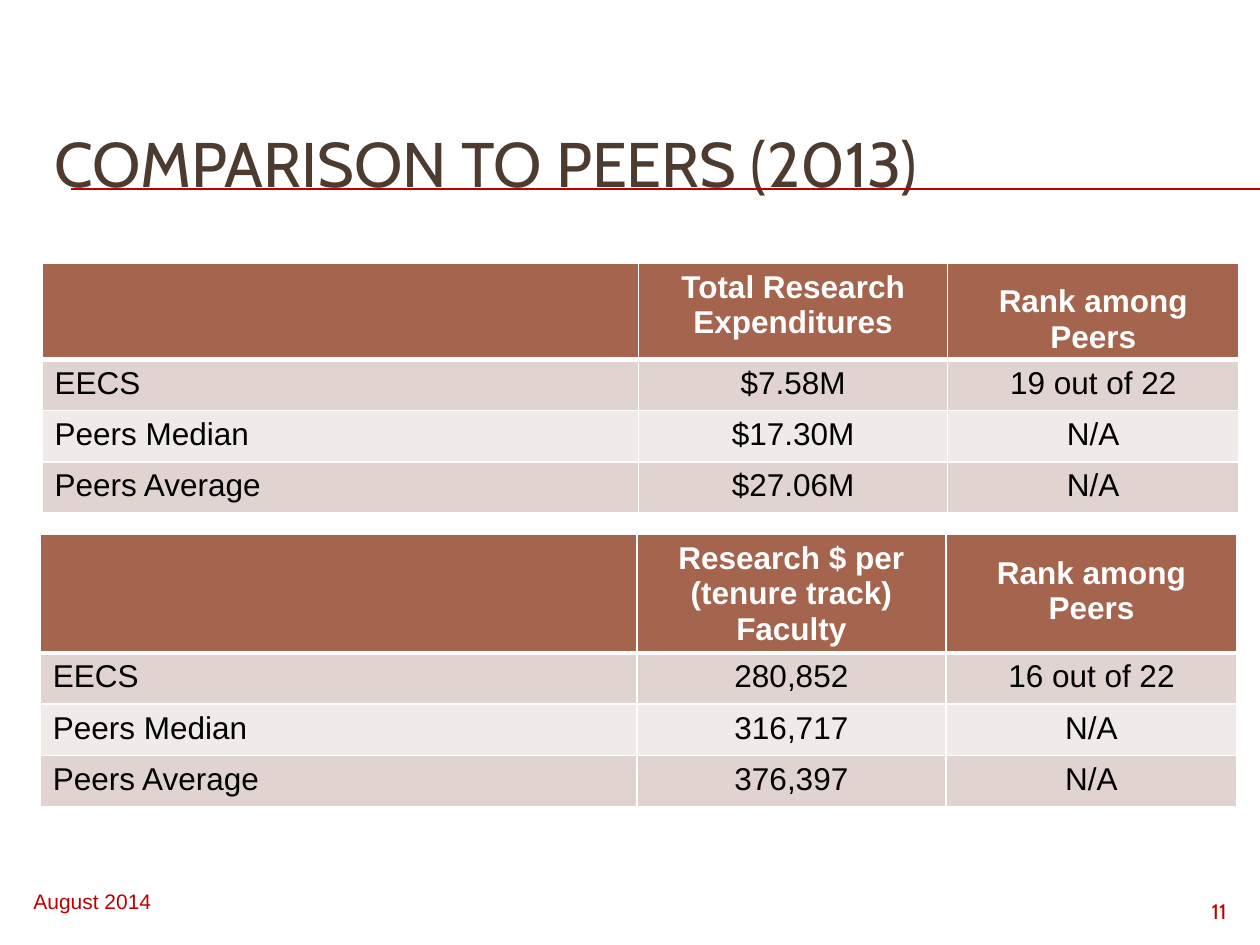
from dataclasses import dataclass

from lxml.etree import SubElement
from pptx import Presentation
from pptx.dml.color import RGBColor
from pptx.enum.shapes import MSO_CONNECTOR
from pptx.enum.text import MSO_ANCHOR, MSO_AUTO_SIZE, PP_ALIGN
from pptx.oxml.ns import qn
from pptx.util import Pt


@dataclass(frozen=True)
class Theme:
    title_color: str = "4E3B30"
    accent: str = "C00000"
    header_fill: str = "A5644E"
    odd_fill: str = "E1D3D0"
    even_fill: str = "F0EAE9"
    white: str = "FFFFFF"
    black: str = "000000"
    heading_font: str = "Cabin"
    body_font: str = "Arial"
    title_size: int = 36
    table_size: int = 18
    footer_size: int = 12


THEME = Theme()
COLUMN_WIDTHS = (341, 176.5, 166.5)
ROW_HEIGHT = 29.2


def style_para(para, font, size, color, align=PP_ALIGN.LEFT, bold=False):
    para.alignment = align
    for span in para.runs:
        span.font.name = font
        span.font.size = Pt(size)
        span.font.bold = bold
        span.font.color.rgb = RGBColor.from_string(color)


def add_rule(page):
    rule = page.shapes.add_connector(
        MSO_CONNECTOR.STRAIGHT, Pt(40.5), Pt(108), Pt(720), Pt(108))
    rule.line.color.rgb = RGBColor.from_string(THEME.accent)
    rule.line.width = Pt(0.75)
    SubElement(rule._element.spPr, qn("a:effectLst"))


def set_title(page, text):
    title = page.shapes.title
    title.left, title.top, title.width, title.height = Pt(24), Pt(60), Pt(684), Pt(66)
    frame = title.text_frame
    frame.text = text
    frame.auto_size = MSO_AUTO_SIZE.NONE
    frame.vertical_anchor = MSO_ANCHOR.MIDDLE
    style_para(frame.paragraphs[0], THEME.heading_font, THEME.title_size, THEME.title_color)


def add_footer(page, text, left, top, width, height, font, align):
    box = page.shapes.add_textbox(Pt(left), Pt(top), Pt(width), Pt(height))
    frame = box.text_frame
    frame.word_wrap = True
    frame.text = text
    style_para(frame.paragraphs[0], font, THEME.footer_size, THEME.accent, align)


def set_borders(cell, **widths):
    properties = cell._tc.get_or_add_tcPr()
    for side in "LRTB":
        border = SubElement(properties, qn(f"a:ln{side}"), w=str(Pt(widths.get(side, 1))))
        fill = SubElement(border, qn("a:solidFill"))
        SubElement(fill, qn("a:srgbClr"), val=THEME.white)


def format_cell(cell, row, column):
    if row == 0:
        fill, color = THEME.header_fill, THEME.white
        set_borders(cell, B=3)
    else:
        fill, color = (THEME.odd_fill if row % 2 else THEME.even_fill), THEME.black
        set_borders(cell, T=3 if row == 1 else 1)
    cell.fill.solid()
    cell.fill.fore_color.rgb = RGBColor.from_string(fill)
    if row == 0 and column == 2:
        cell.margin_top, cell.margin_bottom = Pt(12), Pt(1)
    align = PP_ALIGN.CENTER if column else PP_ALIGN.LEFT
    style_para(cell.text_frame.paragraphs[0], THEME.body_font, THEME.table_size,
               color, align, bold=row == 0)


def add_peer_table(page, left, top, header_height, measure, values, rank):
    rows = [
        ("", measure, "Rank among Peers"),
        ("EECS", values[0], rank),
        ("Peers Median", values[1], "N/A"),
        ("Peers Average", values[2], "N/A"),
    ]
    height = header_height + ROW_HEIGHT * (len(rows) - 1)
    table = page.shapes.add_table(
        len(rows), len(COLUMN_WIDTHS), Pt(left), Pt(top),
        Pt(sum(COLUMN_WIDTHS)), Pt(height)).table
    for column, width in zip(table.columns, COLUMN_WIDTHS):
        column.width = Pt(width)
    for row, texts in enumerate(rows):
        table.rows[row].height = Pt(ROW_HEIGHT if row else header_height)
        for column, text in enumerate(texts):
            cell = table.cell(row, column)
            cell.text = text
            format_cell(cell, row, column)


def main():
    deck = Presentation()
    deck.slide_width, deck.slide_height = Pt(720), Pt(540)
    page = deck.slides.add_slide(deck.slide_layouts[5])
    add_rule(page)
    set_title(page, "COMPARISON TO PEERS (2013)")
    add_peer_table(page, 24, 150.5, 55, "Total Research Expenditures",
                   ("$7.58M", "$17.30M", "$27.06M"), "19 out of 22")
    add_peer_table(page, 23, 305.5, 67, "Research $ per (tenure track) Faculty",
                   ("280,852", "316,717", "376,397"), "16 out of 22")
    add_footer(page, "August 2014", 12, 504, 198, 23, THEME.body_font, PP_ALIGN.LEFT)
    add_footer(page, "11", 648, 510, 60, 19.5, THEME.heading_font, PP_ALIGN.RIGHT)
    deck.save("out.pptx")


if __name__ == "__main__":
    main()
